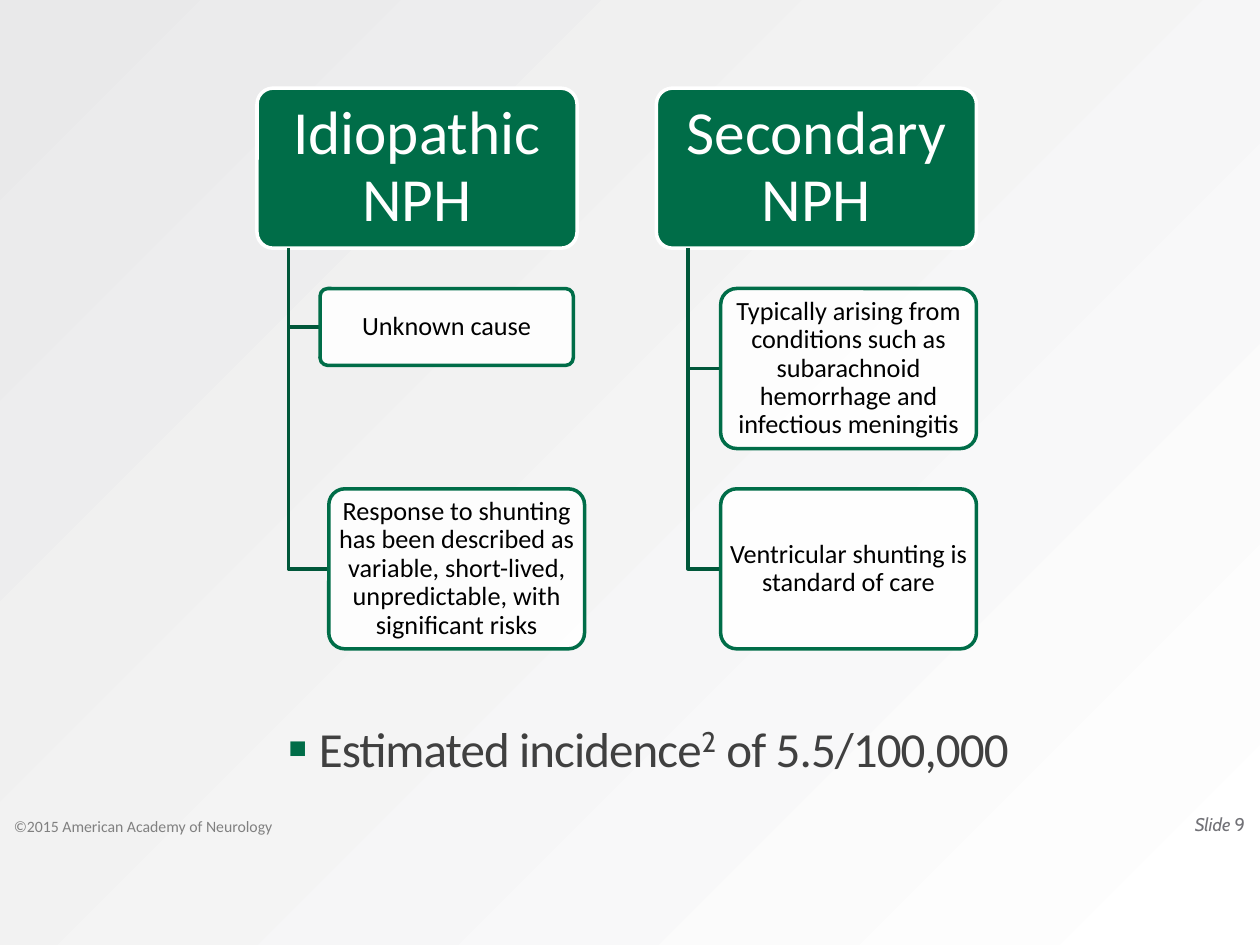
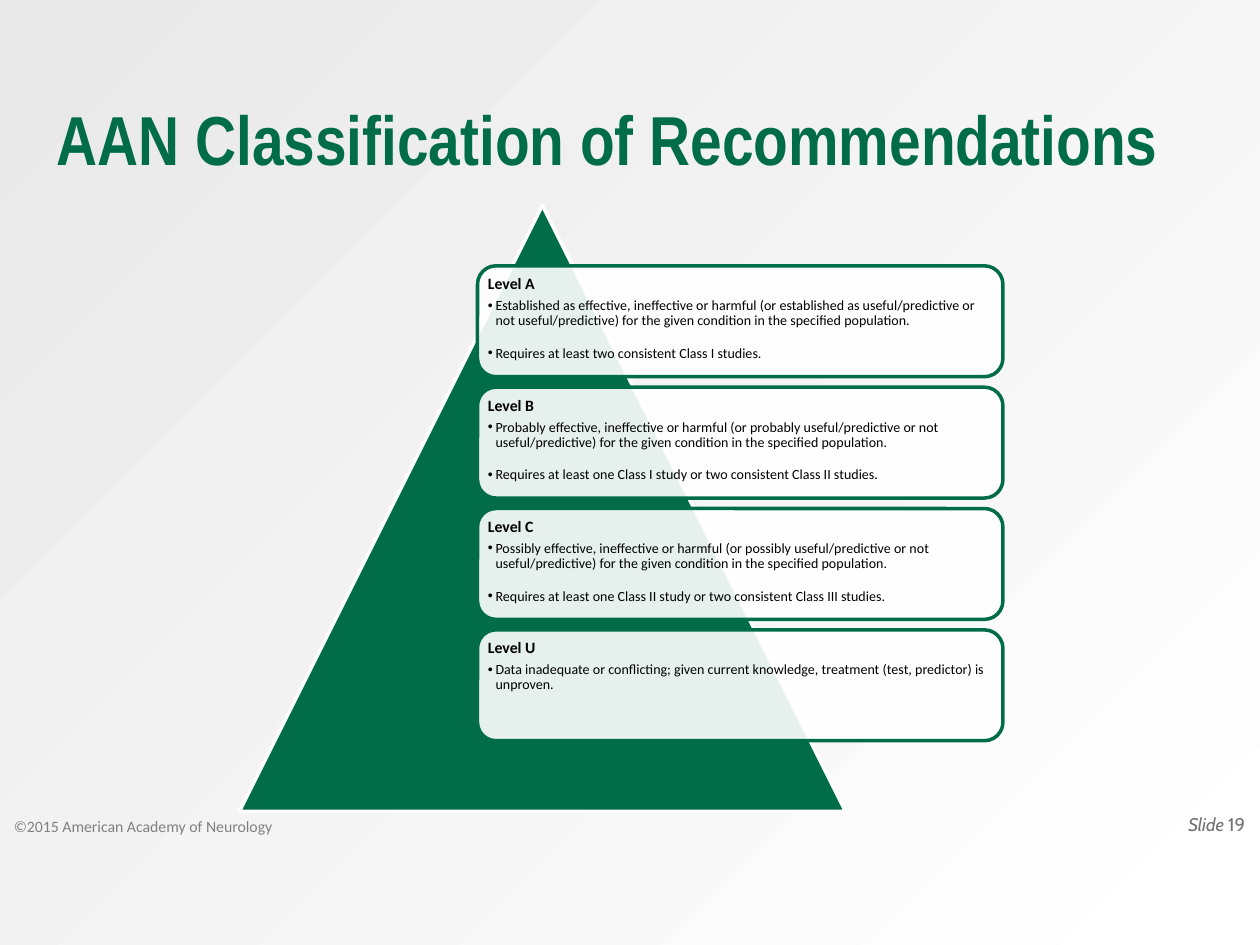
from dataclasses import dataclass

from lxml import etree
from pptx import Presentation
from pptx import util as u
from pptx.dml.color import RGBColor
from pptx.enum import shapes, text
from pptx.oxml.ns import qn

In, Pt = u.Inches, u.Pt
Kind, Al, Anc = shapes.MSO_SHAPE, text.PP_ALIGN, text.MSO_ANCHOR

# Content: heads with their leaves (text, indent, width, height)
TREES = [
    ("Idiopathic NPH", [
        ("Unknown cause", 0.5, 2.01, 0.61),
        ("Response to shunting has been described as variable, "
         "short-lived, unpredictable, with significant risks", 0.57, 2.03, 1.27),
    ]),
    ("Secondary NPH", [
        ("Typically arising from conditions such as subarachnoid "
         "hemorrhage and infectious meningitis", 0.51, 2.03, 1.27),
        ("Ventricular shunting is standard of care", 0.51, 2.03, 1.27),
    ]),
]
TITLE = "AAN Classification of Recommendations"
LEVELS = [
    ("Level A", [
        "Established as effective, ineffective or harmful (or established as "
        "useful/predictive or not useful/predictive) for the given condition "
        "in the specified population.",
        "Requires at least two consistent Class I studies."]),
    ("Level B", [
        "Probably effective, ineffective or harmful (or probably "
        "useful/predictive or not useful/predictive) for the given condition "
        "in the specified population.",
        "Requires at least one Class I study or two consistent Class II studies."]),
    ("Level C", [
        "Possibly effective, ineffective or harmful (or possibly "
        "useful/predictive or not useful/predictive) for the given condition "
        "in the specified population.",
        "Requires at least one Class II study or two consistent Class III studies."]),
    ("Level U", [
        "Data inadequate or conflicting; given current knowledge, treatment "
        "(test, predictor) is unproven."]),
]
RIGHTS = "©2015 American Academy of Neurology"


@dataclass(frozen=True)
class Theme:
    green: str = "006D48"
    stem: str = "00573A"
    white: str = "FFFFFF"
    shade: str = "E9E9EA"
    black: str = "000000"
    body: str = "404040"
    gray: str = "808080"
    number: str = "727277"
    main: str = "Calibri"
    alt: str = "Cabin"
    display: str = "Arial Narrow"
    title_pt: float = 39.6
    head_pt: float = 35
    body_pt: float = 28
    leaf_pt: float = 15
    num_pt: float = 10.5
    small_pt: float = 9
    note_pt: float = 8
    line_pt: float = 2


T = Theme()


def rgb(code):
    return RGBColor.from_string(code)


def sub(node, tag, **attrs):
    return etree.SubElement(node, qn(tag), attrs)


# Text helpers
def setup(frame, pads, anchor):
    frame.word_wrap = True
    frame.vertical_anchor = anchor
    (frame.margin_left, frame.margin_top,
     frame.margin_right, frame.margin_bottom) = [In(p) for p in pads]
    return frame


def label(slide, box, pads=(0, 0.02, 0, 0.02), anchor=Anc.BOTTOM):
    shape = slide.shapes.add_textbox(*[In(v) for v in box])
    return setup(shape.text_frame, pads, anchor).paragraphs[0]


def add_run(para, words, size, color, face=T.main, bold=False, italic=False):
    run = para.add_run()
    run.text = words
    font = run.font
    font.size, font.name, font.bold, font.italic = Pt(size), face, bold, italic
    font.color.rgb = rgb(color)
    return run


def bullet(para, mark, indent, color=None, size=100):
    props = para._p.get_or_add_pPr()
    props.set("marL", str(In(indent)))
    props.set("indent", str(-In(indent)))
    if color:
        sub(sub(props, "a:buClr"), "a:srgbClr", val=color)
    sub(props, "a:buSzPct", val=str(size * 1000))
    sub(props, "a:buFont", typeface="Arial")
    sub(props, "a:buChar", char=mark)


# Shape helpers
def block(slide, kind, box, fill, line, alpha=100, adj=None):
    shape = slide.shapes.add_shape(kind, *[In(v) for v in box])
    shape.shadow.inherit = False
    shape.fill.solid()
    shape.fill.fore_color.rgb = rgb(fill)
    if alpha < 100:
        color = shape._element.spPr.find(qn("a:solidFill"))[0]
        sub(color, "a:alpha", val=str(alpha * 1000))
    shape.line.color.rgb = rgb(line)
    shape.line.width = Pt(T.line_pt)
    if adj is not None:
        shape.adjustments[0] = adj
    return shape


def card(slide, box, words, size, color, pads, **look):
    shape = block(slide, Kind.ROUNDED_RECTANGLE, box, adj=0.1, **look)
    para = setup(shape.text_frame, pads, Anc.MIDDLE).paragraphs[0]
    para.alignment, para.line_spacing = Al.CENTER, 0.9
    add_run(para, words, size, color)


def elbow(slide, x, top, end, y):
    path = slide.shapes.build_freeform(In(x), In(top))
    path.add_line_segments([(In(x), In(y)), (In(end), In(y))], close=False)
    shape = path.convert_to_shape()
    shape.shadow.inherit = False
    shape.fill.background()
    shape.line.color.rgb = rgb(T.stem)
    shape.line.width = Pt(T.line_pt)


PANEL = dict(fill=T.white, line=T.green, alpha=90)


# Shared background and footers
def new_slide(deck, number):
    slide = deck.slides.add_slide(deck.slide_layouts[6])
    fill = slide.background.fill
    fill.gradient()
    for stop, color, pos in zip(fill.gradient_stops, (T.white, T.shade), (0, 1)):
        stop.color.rgb, stop.position = rgb(color), pos
    grad = slide._element.find(".//" + qn("a:gradFill"))
    grad.remove(grad.find(qn("a:lin")))
    sub(sub(grad, "a:path", path="circle"), "a:fillToRect", l="100000", t="100000")

    add_run(label(slide, (0.11, 5.65, 6, 1)), RIGHTS, T.small_pt, T.gray)
    para = label(slide, (7.65, 6.34, 2.33, 0.4), (0.1, 0.05, 0.1, 0.05), Anc.MIDDLE)
    para.alignment = Al.RIGHT
    add_run(para, "Slide ", T.num_pt, T.number, T.alt, italic=True)
    add_run(para, str(number), T.num_pt, T.number, T.alt)
    return slide


# Two trees of causes
def draw_trees(deck):
    slide = new_slide(deck, 9)
    wide, high, top = 2.54, 1.27, 0.7
    for col, (head, leaves) in enumerate(TREES):
        left = 2.04 + col * 3.17
        card(slide, (left, top, wide, high), head, T.head_pt, T.white,
             (0.07, 0.05, 0.07, 0.05), fill=T.green, line=T.white)
        for row, (words, dent, w, h) in enumerate(leaves):
            x, y = left + dent, 2.29 + row * 1.59
            elbow(slide, left + 0.25, top + high, x, y + h / 2)
            card(slide, (x, y, w, h), words, T.leaf_pt, T.black,
                 (0.03, 0.02, 0.03, 0.02), **PANEL)

    para = label(slide, (2.28, 5.7, 6.75, 0.62), (0, 0, 0, 0), Anc.TOP)
    bullet(para, "▪", 0.25, T.green, 120)
    for words, face, base in [("Estimated incidence", T.main, 0),
                              ("2", T.alt, 30000),
                              (" of 5.5/100,000", T.main, 0)]:
        props = add_run(para, words, T.body_pt, T.body, face)._r.get_or_add_rPr()
        props.set("spc", "-50")
        props.set("baseline", str(base))


# Pyramid of evidence levels
def draw_levels(deck):
    slide = new_slide(deck, 19)
    para = label(slide, (0.45, 0.33, 8.96, 1.12))
    para.line_spacing = 0.9
    add_run(para, TITLE, T.title_pt, T.green, T.display, bold=True)

    block(slide, Kind.ISOSCELES_TRIANGLE, (1.9, 1.63, 4.81, 4.81), T.green, T.white)
    for row, (name, notes) in enumerate(LEVELS):
        box = (3.79, 2.11 + row * 0.963, 4.17, 0.88)
        shape = block(slide, Kind.ROUNDED_RECTANGLE, box, **PANEL)
        frame = setup(shape.text_frame, [0.04] * 4, Anc.TOP)
        para = frame.paragraphs[0]
        para.alignment, para.line_spacing, para.space_after = Al.LEFT, 0.9, Pt(3)
        add_run(para, name, T.small_pt, T.black, bold=True)
        for note in notes:
            para = frame.add_paragraph()
            para.alignment, para.line_spacing = Al.LEFT, 0.9
            para.space_after = Pt(10)
            bullet(para, "•", 0.06)
            add_run(para, note, T.note_pt, T.black)


def main():
    deck = Presentation()
    deck.slide_width, deck.slide_height = In(10), In(7.5)
    draw_trees(deck)
    draw_levels(deck)
    deck.save("out.pptx")


if __name__ == "__main__":
    main()
